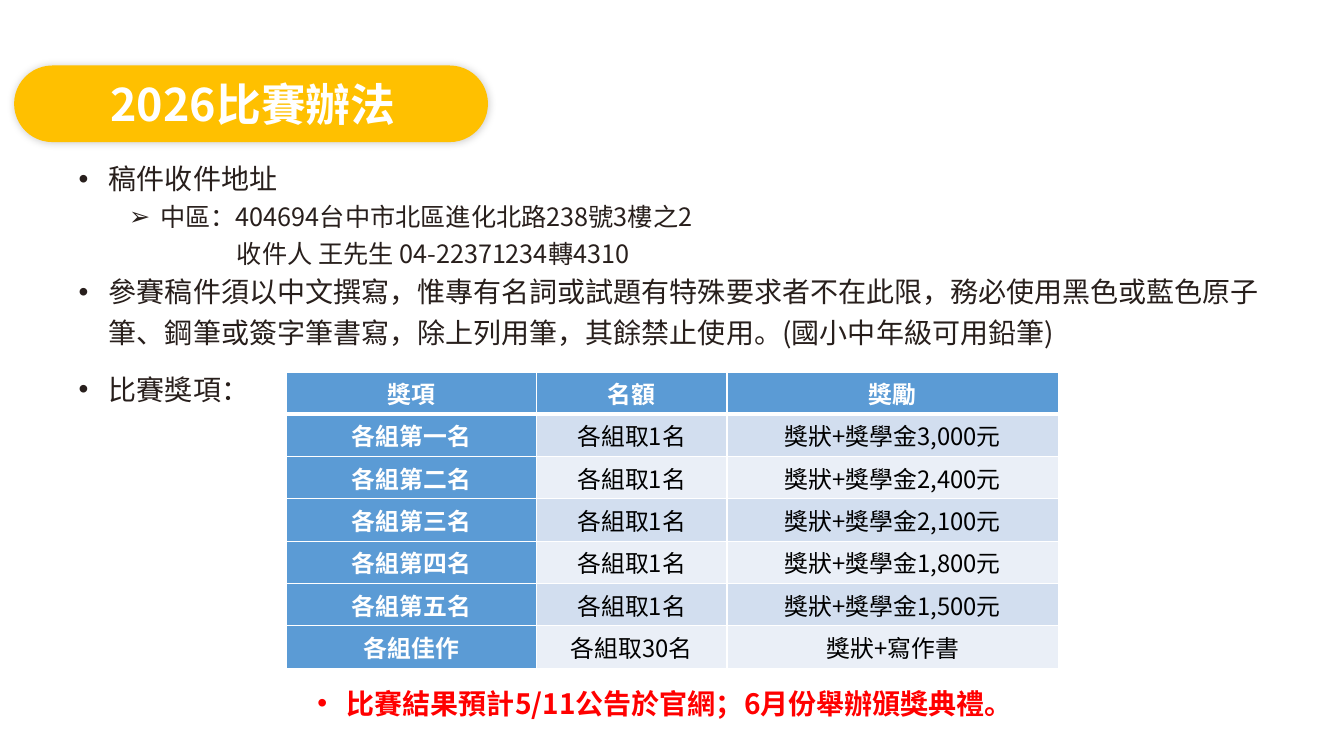
from lxml.etree import SubElement
from pptx import Presentation
from pptx.dml.color import RGBColor
from pptx.enum.shapes import MSO_SHAPE
from pptx.enum.text import MSO_ANCHOR, MSO_AUTO_SIZE, PP_ALIGN
from pptx.oxml.ns import qn
from pptx.util import Pt

PX = 9144
WHITE = RGBColor(0xFF, 0xFF, 0xFF)
BLACK = RGBColor(0, 0, 0)
INK = RGBColor(0x28, 0x1F, 0x1C)
RED = RGBColor(0xFF, 0, 0)
AMBER = RGBColor(0xFF, 0xC0, 0)
BLUE = RGBColor(0x5B, 0x9B, 0xD5)
BANDS = RGBColor(0xD2, 0xDE, 0xEF), RGBColor(0xEA, 0xEF, 0xF7)
NOTO, CALIBRI = "Noto Sans CJK SC", "Calibri"

RULES = [
    ("稿件收件地址", dict(bullet="•", left=30, hang=30)),
    ("中區：404694台中市北區進化北路238號3樓之2",
     dict(bullet="➢", left=81, hang=31, level=1, size=18)),
    ("收件人 王先生 04-22371234轉4310", dict(left=157, level=1, size=18)),
    ("參賽稿件須以中文撰寫，惟專有名詞或試題有特殊要求者不在此限，"
     "務必使用黑色或藍色原子筆、鋼筆或簽字筆書寫，除上列用筆，其餘禁止使用。"
     "(國小中年級可用鉛筆)", dict(bullet="•", left=30, hang=30)),
    ("比賽獎項：", dict(bullet="•", left=30, hang=30, before=12)),
]
PRIZES = [
    ("獎項", "名額", "獎勵"),
    ("各組第一名", "各組取1名", "獎狀+獎學金3,000元"),
    ("各組第二名", "各組取1名", "獎狀+獎學金2,400元"),
    ("各組第三名", "各組取1名", "獎狀+獎學金2,100元"),
    ("各組第四名", "各組取1名", "獎狀+獎學金1,800元"),
    ("各組第五名", "各組取1名", "獎狀+獎學金1,500元"),
    ("各組佳作", "各組取30名", "獎狀+寫作書"),
]


def scaled(box):
    """Turn px lengths into EMU."""
    return [length * PX for length in box]


def place(shape, box):
    """Move a shape to a px box."""
    shape.left, shape.top, shape.width, shape.height = scaled(box)


def write(para, text, size=20, font=NOTO, color=INK, bold=False, align=PP_ALIGN.LEFT,
          spacing=1.0, before=0, level=0, left=0, hang=0, bullet=None):
    """Fill a paragraph with one formatted run."""
    para.level, para.alignment, para.line_spacing = level, align, spacing
    para.space_before, para.space_after = Pt(before), Pt(0)
    props = para._p.get_or_add_pPr()
    props.set("marL", str(left * PX))
    props.set("indent", str(-hang * PX))
    if bullet:
        SubElement(props, qn("a:buFont"), typeface="Arial")
        SubElement(props, qn("a:buChar"), char=bullet)
    else:
        SubElement(props, qn("a:buNone"))
    span = para.add_run()
    span.text = text
    span.font.name, span.font.size, span.font.bold = font, Pt(size), bold
    span.font.color.rgb = color
    SubElement(span._r.get_or_add_rPr(), qn("a:ea"), typeface=NOTO)


def add_heading(page, box):
    """Draw the amber pill and set the title on it."""
    pill = page.shapes.add_shape(MSO_SHAPE.ROUNDED_RECTANGLE, *scaled(box))
    pill.adjustments[0] = 0.5
    pill.fill.solid()
    pill.fill.fore_color.rgb = AMBER
    pill.line.fill.background()
    effects = SubElement(pill._element.spPr, qn("a:effectLst"))
    shadow = SubElement(effects, qn("a:outerShdw"), blurRad=str(Pt(6)), dist="0",
                        dir="18900000", algn="ctr", rotWithShape="0")
    tint = SubElement(shadow, qn("a:srgbClr"), val=str(BLACK))
    SubElement(tint, qn("a:alpha"), val="20000")
    title = page.shapes.title
    place(title, box)
    pill._element.addnext(title._element)
    frame = title.text_frame
    frame.auto_size, frame.vertical_anchor = MSO_AUTO_SIZE.NONE, MSO_ANCHOR.MIDDLE
    frame.margin_left = 4 * PX
    frame.margin_top = frame.margin_right = frame.margin_bottom = 0
    write(frame.paragraphs[0], "2026比賽辦法", size=32, color=WHITE, bold=True,
          align=PP_ALIGN.CENTER)


def add_rules(page, box):
    """List the contest rules in the body placeholder."""
    body = page.placeholders[1]
    place(body, box)
    frame = body.text_frame
    frame.auto_size, frame.vertical_anchor = MSO_AUTO_SIZE.NONE, MSO_ANCHOR.TOP
    for index, (text, style) in enumerate(RULES):
        para = frame.add_paragraph() if index else frame.paragraphs[0]
        write(para, text, spacing=1.2, **style)


def add_borders(cell, bottom):
    """Give a cell white borders with the given bottom width."""
    props = cell._tc.get_or_add_tcPr()
    for side, width in (("L", 1), ("R", 1), ("T", 1), ("B", bottom)):
        line = SubElement(props, qn(f"a:ln{side}"), w=str(Pt(width)))
        SubElement(SubElement(line, qn("a:solidFill")), qn("a:srgbClr"), val=str(WHITE))


def add_prizes(page, box, widths):
    """Build the prize table."""
    table = page.shapes.add_table(len(PRIZES), len(widths), *scaled(box)).table
    for column, width in zip(table.columns, widths):
        column.width = width * PX
    for row_index, texts in enumerate(PRIZES):
        table.rows[row_index].height = box[3] // len(PRIZES) * PX
        for column_index, text in enumerate(texts):
            cell = table.cell(row_index, column_index)
            label = row_index == 0 or column_index == 0
            add_borders(cell, 1 if row_index else 3)
            cell.fill.solid()
            cell.fill.fore_color.rgb = BLUE if label else BANDS[(row_index - 1) % 2]
            cell.vertical_anchor = MSO_ANCHOR.MIDDLE
            cell.margin_left = cell.margin_right = 7 * PX
            cell.margin_top = cell.margin_bottom = 0
            write(cell.text_frame.paragraphs[0], text, size=17, bold=label,
                  font=CALIBRI if label else NOTO, color=WHITE if label else BLACK,
                  align=PP_ALIGN.CENTER)


def add_notice(page, box):
    """Add the red results notice."""
    frame = page.shapes.add_textbox(*scaled(box)).text_frame
    frame.word_wrap = True
    write(frame.paragraphs[0], "比賽結果預計5/11公告於官網；6月份舉辦頒獎典禮。",
          color=RED, bold=True, bullet="•", left=29, hang=29)


def main():
    """Build and save the contest slide."""
    deck = Presentation()
    deck.slide_width, deck.slide_height = scaled((1333, 750))
    page = deck.slides.add_slide(deck.slide_layouts[1])
    add_rules(page, (68, 149, 1199, 261))
    add_prizes(page, (284, 369, 766, 294), (248, 189, 329))
    add_notice(page, (305, 676, 725, 44))
    add_heading(page, (14, 65, 470, 76))
    deck.save("out.pptx")


if __name__ == "__main__":
    main()
